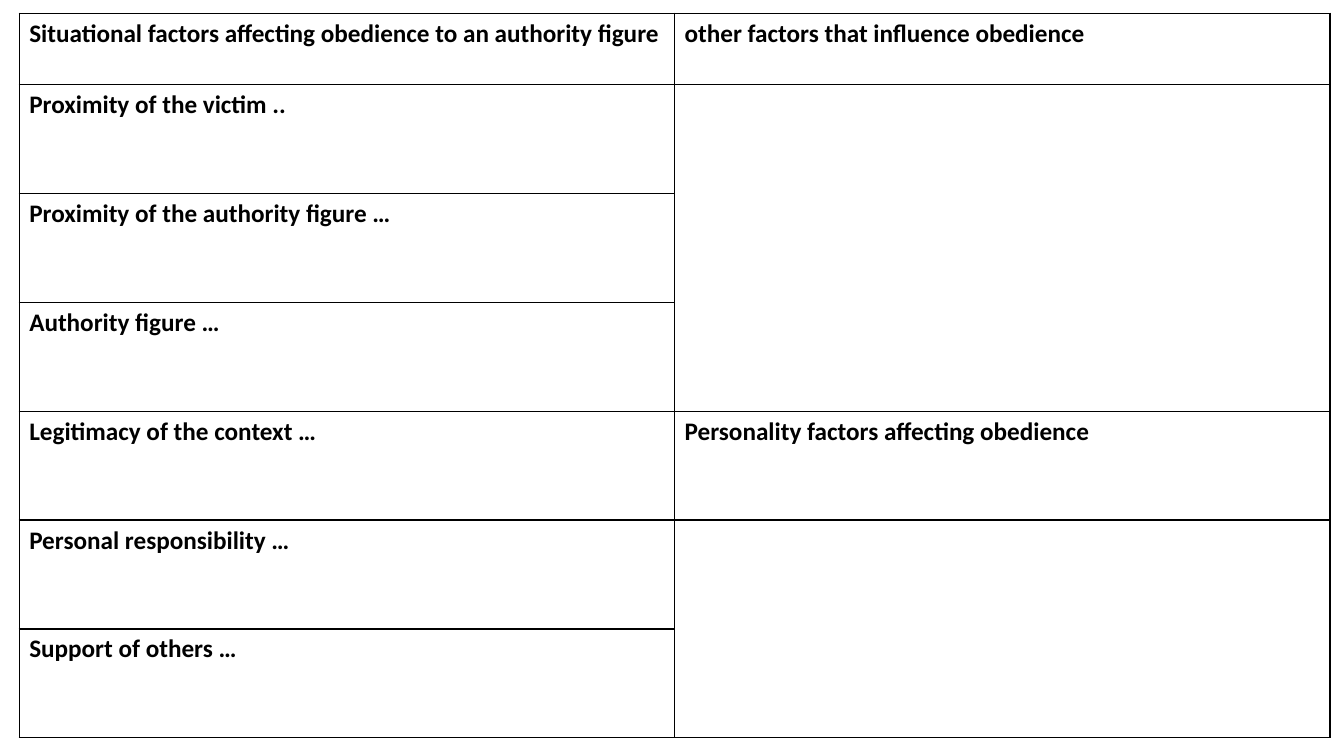
from lxml import etree
from pptx import Presentation
from pptx.dml.color import RGBColor
from pptx.oxml.ns import qn
from pptx.util import Inches, Pt

SLIDE_W, SLIDE_H = 13.33, 7.5
LEFT, TOP = 0.19, 0.13
COLUMN_W, HEADER_H, FACTOR_H = 6.5, 0.71, 1.08
INK = "000000"

situational_factors = [
    "Situational factors affecting obedience to an authority figure",
    "Proximity of the victim ..",
    "Proximity of the authority figure …",
    "Authority figure …",
    "Legitimacy of the context …",
    "Personal responsibility …",
    "Support of others …",
]
other_factors = {
    0: "other factors that influence obedience",
    4: "Personality factors affecting obedience",
}
answer_spaces = [(1, 3), (5, 6)]
text_format = {"name": "Calibri", "size": Pt(18), "bold": True}


def add_borders(cell):
    properties = cell._tc.get_or_add_tcPr()
    for position, side in enumerate(("a:lnL", "a:lnR", "a:lnT", "a:lnB")):
        line = etree.Element(qn(side), w=str(Pt(1)))
        fill = etree.SubElement(line, qn("a:solidFill"))
        etree.SubElement(fill, qn("a:srgbClr"), val=INK)
        properties.insert(position, line)


deck = Presentation()
deck.slide_width, deck.slide_height = Inches(SLIDE_W), Inches(SLIDE_H)
slide = deck.slides.add_slide(deck.slide_layouts[6])

row_count = len(situational_factors)
table_h = HEADER_H + (row_count - 1) * FACTOR_H
factors = slide.shapes.add_table(
    row_count, 2, Inches(LEFT), Inches(TOP), Inches(2 * COLUMN_W), Inches(table_h)
).table
factors.first_row = factors.horz_banding = False
for column in factors.columns:
    column.width = Inches(COLUMN_W)

for index, situational in enumerate(situational_factors):
    factors.rows[index].height = Inches(FACTOR_H if index else HEADER_H)
    for side, wording in enumerate((situational, other_factors.get(index, ""))):
        cell = factors.cell(index, side)
        cell.fill.background()
        add_borders(cell)
        if wording:
            run = cell.text_frame.paragraphs[0].add_run()
            run.text = wording
            run.font.color.rgb = RGBColor.from_string(INK)
            for attribute, value in text_format.items():
                setattr(run.font, attribute, value)

for first, last in answer_spaces:
    factors.cell(first, 1).merge(factors.cell(last, 1))

deck.save("out.pptx")
